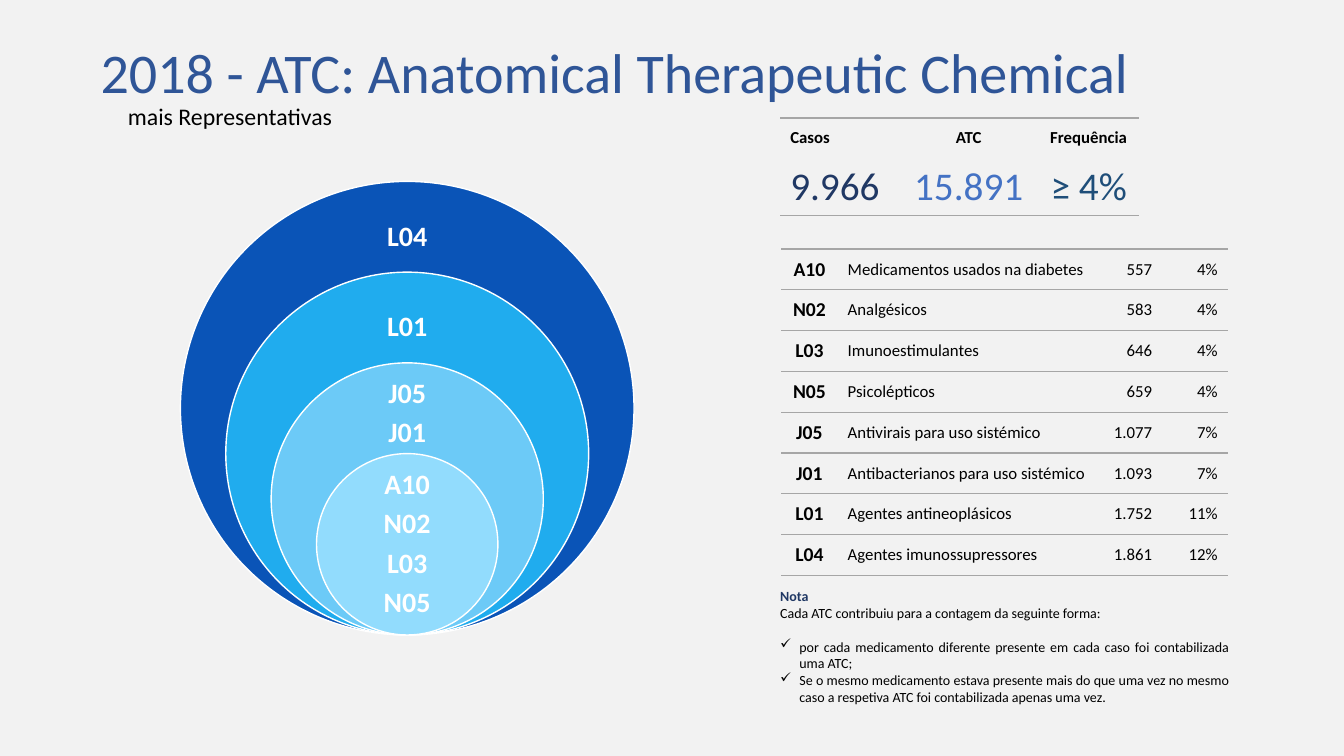
from dataclasses import dataclass

from lxml import etree
from pptx import Presentation
from pptx import util as u
from pptx.dml.color import RGBColor
from pptx.enum import shapes, text
from pptx.oxml import ns

LEFT, MID, RIGHT, JUST = (text.PP_ALIGN.LEFT, text.PP_ALIGN.CENTER,
                          text.PP_ALIGN.RIGHT, text.PP_ALIGN.JUSTIFY)
TOP, HALF = text.MSO_ANCHOR.TOP, text.MSO_ANCHOR.MIDDLE


@dataclass(frozen=True)
class Theme:
    font: str = "Calibri"
    back: str = "F2F2F2"
    ink: str = "000000"
    white: str = "FFFFFF"
    title: str = "2F5597"
    navy: str = "203864"
    blue: str = "4472C4"
    steel: str = "1F4E79"
    rule: str = "A6A6A6"
    rings: tuple = ("0A54B7", "20ACEE", "6CCAF7", "92DCFD")
    huge: int = 40
    big: int = 28
    ring: int = 20
    sub: int = 17
    code: int = 14
    body: int = 12
    note: int = 10


class Board:
    """Draws on one slide; lengths are grid columns and rows of 0.1 inch."""
    cell = u.Inches(0.1)
    no_style = "{2D5ABB26-0587-4C30-8999-92F81FD0307C}"

    def __init__(self, theme, cols, rows):
        self.theme = theme
        self.deck = Presentation()
        self.deck.slide_width = self.size(cols)
        self.deck.slide_height = self.size(rows)
        self.slide = self.deck.slides.add_slide(self.deck.slide_layouts[6])
        fill = self.slide.background.fill
        fill.solid()
        fill.fore_color.rgb = RGBColor.from_string(theme.back)

    def size(self, count):
        return u.Emu(round(count * self.cell))

    def place(self, box):
        return [self.size(part) for part in box]

    def style(self, para, size, color, bold=False, align=LEFT):
        para.alignment = align
        for run in para.runs:
            run.font.name = self.theme.font
            run.font.size = u.Pt(size)
            run.font.bold = bold
            run.font.color.rgb = RGBColor.from_string(color)

    def label(self, box, words, size, color, bold=False, align=LEFT,
              anchor=TOP, inset=None, line=None, gap=0):
        frame = self.slide.shapes.add_textbox(*self.place(box)).text_frame
        frame.word_wrap = True
        frame.vertical_anchor = anchor
        if inset is not None:
            frame.margin_left = frame.margin_right = self.size(inset)
            frame.margin_top = frame.margin_bottom = self.size(inset)
        frame.text = words
        for para in frame.paragraphs:
            self.style(para, size, color, bold, align)
            para.line_spacing = line
            para.space_after = u.Pt(gap)
        return frame

    def bullet(self, para, mark, indent):
        props = para._p.get_or_add_pPr()
        props.set("marL", str(self.size(indent)))
        props.set("indent", str(-self.size(indent)))
        etree.SubElement(props, ns.qn("a:buChar")).set("char", mark)

    def disc(self, box, color):
        oval = self.slide.shapes.add_shape(shapes.MSO_SHAPE.OVAL, *self.place(box))
        oval.shadow.inherit = False
        oval.fill.solid()
        oval.fill.fore_color.rgb = RGBColor.from_string(color)
        oval.line.color.rgb = RGBColor.from_string(self.theme.white)
        oval.line.width = u.Pt(1)

    def edge(self, cell, sides):
        props = cell._tc.get_or_add_tcPr()
        for spot, side in enumerate(sides):
            line = etree.Element(ns.qn("a:ln" + side), w=str(u.Pt(1)))
            fill = etree.SubElement(line, ns.qn("a:solidFill"))
            etree.SubElement(fill, ns.qn("a:srgbClr")).set("val", self.theme.rule)
            props.insert(spot, line)

    def table(self, left, top, cols, rows, data, look, sides):
        """look(row, col) gives size, colour, bold, align and anchor."""
        box = self.place((left, top, sum(cols), sum(rows)))
        grid = self.slide.shapes.add_table(len(rows), len(cols), *box).table
        grid.first_row = grid.horz_banding = False
        grid._tbl.tblPr.find(ns.qn("a:tableStyleId")).text = self.no_style
        for col, width in zip(grid.columns, cols):
            col.width = self.size(width)
        for r, (row, high) in enumerate(zip(data, rows)):
            grid.rows[r].height = self.size(high)
            for c, words in enumerate(row):
                cell = grid.cell(r, c)
                cell.text = words
                *font, anchor = look(r, c)
                self.style(cell.text_frame.paragraphs[0], *font)
                cell.vertical_anchor = anchor
                cell.fill.background()
                self.edge(cell, sides[r])


def main():
    t = Theme()
    board = Board(t, 133.33, 75)

    # Heading
    board.label((9, 4, 112.8, 6.3), "2018 - ATC: Anatomical Therapeutic Chemical",
                t.huge, t.title, line=0.9)
    board.label((11.7, 9.6, 41.3, 4.1), "mais Representativas",
                t.sub, t.ink, align=JUST, anchor=HALF, line=0.9)

    # Nested circles that share their lowest point
    axis, base, step = 40.4, 63, 9
    rings = [("L04", 20.2, 6.8), ("L01", 29.2, 6.5),
             ("J05\nJ01", 38, 6.1), ("A10\nN02\nL03\nN05", 49.5, 9)]
    wide = 12.6
    for i, (codes, top, high) in enumerate(rings):
        span = step * (5 - i)
        board.disc((axis - span / 2, base - span, span, span), t.rings[i])
        board.label((axis - wide / 2, top, wide, high), codes, t.ring, t.white,
                    True, MID, HALF, inset=1.6, line=0.9, gap=6.6)

    # Totals
    tints = (t.navy, t.blue, t.steel)

    def total(r, c):
        align = MID if c else LEFT
        if r:
            return t.big, tints[c], False, align, TOP
        return t.body, t.ink, True, align, HALF

    board.table(77.4, 11.7, (11.8, 13.8, 10), (4, 5.7),
                [("Casos", "ATC", "Frequência"), ("9.966", "15.891", "≥ 4%")],
                total, ("T", "B"))

    # Classes by count
    items = [
        ("A10", "Medicamentos usados na diabetes", "557", "4%"),
        ("N02", "Analgésicos", "583", "4%"),
        ("L03", "Imunoestimulantes", "646", "4%"),
        ("N05", "Psicolépticos", "659", "4%"),
        ("J05", "Antivirais para uso sistémico", "1.077", "7%"),
        ("J01", "Antibacterianos para uso sistémico", "1.093", "7%"),
        ("L01", "Agentes antineoplásicos", "1.752", "11%"),
        ("L04", "Agentes imunossupressores", "1.861", "12%"),
    ]
    sides = (MID, LEFT, RIGHT, RIGHT)

    def entry(r, c):
        size = t.body if c else t.code
        return size, t.ink, c == 0, sides[c], HALF

    count = len(items)
    board.table(77.5, 24.7, (5.6, 26, 6.2, 6.5), [32.4 / count] * count,
                items, entry, ["TB"] * count)

    # Note
    note = board.label(
        (77.4, 58.3, 44.5, 12.3),
        "Nota\n"
        "Cada ATC contribuiu para a contagem da seguinte forma:\n"
        "por cada medicamento diferente presente em cada caso foi contabilizada uma ATC;\n"
        "Se o mesmo medicamento estava presente mais do que uma vez no mesmo caso "
        "a respetiva ATC foi contabilizada apenas uma vez.",
        t.note, t.ink, align=JUST, inset=0)
    head, _, *points = note.paragraphs
    board.style(head, t.note, t.navy, True, JUST)
    points[0].space_before = u.Pt(12)
    for point in points:
        board.bullet(point, "✓", 1.9)

    board.deck.save("out.pptx")


if __name__ == "__main__":
    main()
